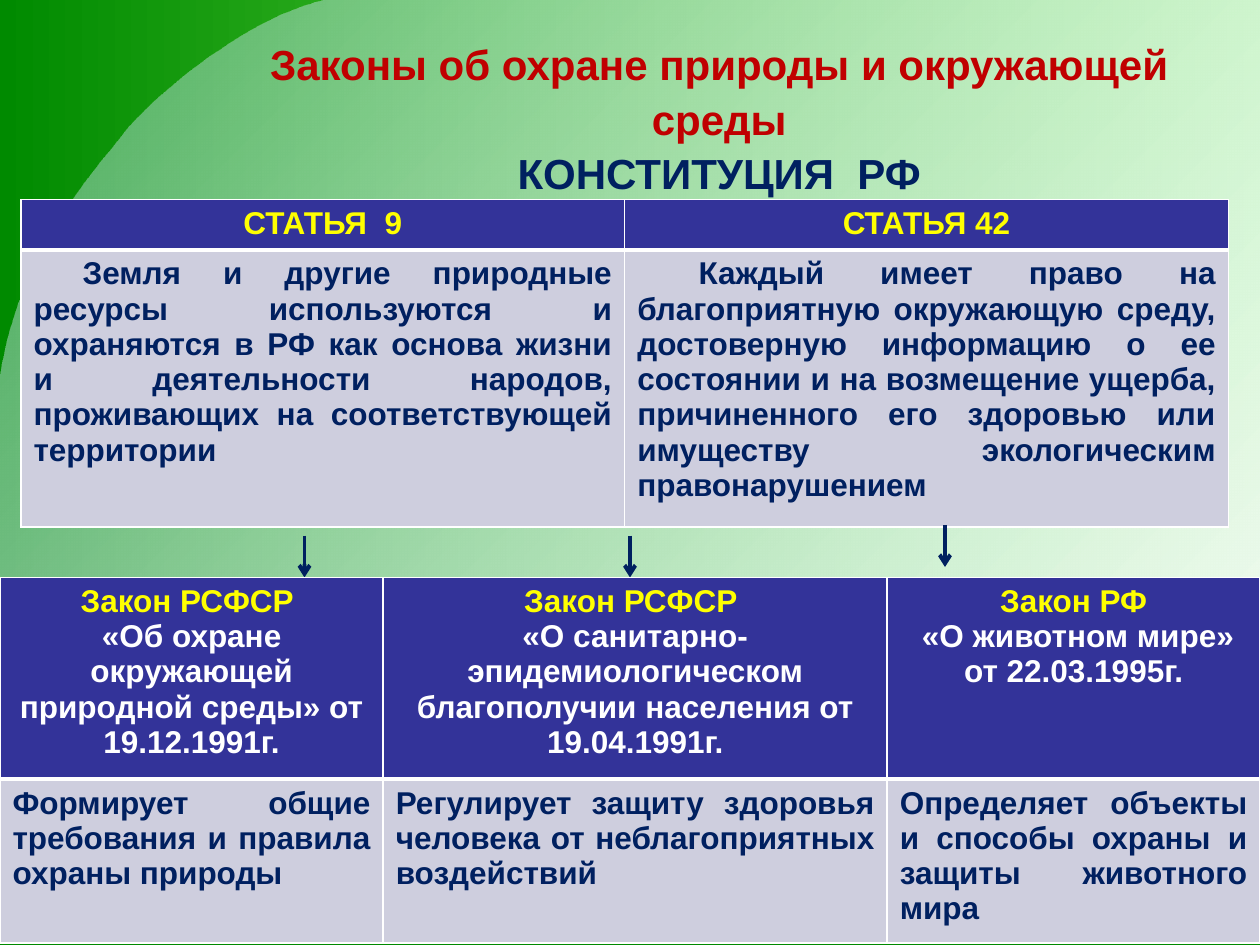
from lxml.etree import SubElement
from pptx import Presentation
from pptx.dml.color import RGBColor
from pptx.enum.shapes import MSO_CONNECTOR
from pptx.enum.text import MSO_ANCHOR, PP_ALIGN
from pptx.oxml.ns import qn
from pptx.util import Pt

FONT = "Arial"
HEX = {
    "green": "008A00", "lime": "99FF66", "mist": "BBE0E3", "white": "FFFFFF",
    "red": "C00000", "navy": "002060", "yellow": "FFFF00",
    "head": "333399", "body": "CECEDE",
}
ARTICLES = [
    ("СТАТЬЯ  9", 28,
     "Земля и другие природные ресурсы используются и охраняются в РФ как "
     "основа жизни и деятельности народов, проживающих на соответствующей "
     "территории"),
    ("СТАТЬЯ 42", 35,
     "Каждый имеет право на благоприятную окружающую среду, достоверную "
     "информацию о ее состоянии и на возмещение ущерба, причиненного его "
     "здоровью или имуществу экологическим правонарушением"),
]
LAWS = [
    ("Закон РСФСР ", "«Об охране окружающей природной среды» от 19.12.1991г.",
     "Формирует общие требования и правила охраны природы"),
    ("Закон РСФСР ",
     "«О санитарно- эпидемиологическом благополучии населения от 19.04.1991г.",
     "Регулирует защиту здоровья человека от неблагоприятных воздействий"),
    ("Закон РФ", " «О животном мире» от 22.03.1995г.",
     "Определяет объекты и способы охраны и защиты животного мира"),
]


def color(name):
    return RGBColor.from_string(HEX[name])


def blend(fill, names, angle):
    fill.gradient()
    fill.gradient_angle = angle
    for stop, name, pos in zip(fill.gradient_stops, names, (0, 1)):
        stop.color.rgb = color(name)
        stop.position = pos


def curve(a, b, c, d, steps=24):
    """Points along a cubic curve, without its start."""
    for i in range(1, steps + 1):
        t = i / steps
        u = 1 - t
        yield tuple(u**3 * p + 3 * u * u * t * q + 3 * u * t * t * r + t**3 * s
                    for p, q, r, s in zip(a, b, c, d))


def outline(slide, points):
    first, *rest = [(Pt(x), Pt(y)) for x, y in points]
    form = slide.shapes.build_freeform(*first)
    form.add_line_segments(rest, close=True)
    shape = form.convert_to_shape()
    shape.shadow.inherit = False
    shape.line.fill.background()
    return shape


def backdrop(slide, wide, high):
    blend(slide.background.fill, ("green", "lime"), 0)
    top, bend, edge = (186, 0), (70.5, 77), (0, 217)
    sheet = outline(slide, [
        top,
        *curve(top, (137, 11.5), (83.5, 60), bend),
        *curve(bend, (57.5, 95), (11.5, 140), edge),
        (0, high), (wide, high), (wide, 0)])
    blend(sheet.fill, ("mist", "white"), 315)
    stop = sheet.fill._xPr.find(".//" + qn("a:srgbClr"))
    SubElement(stop, qn("a:alpha"), val="39000")

    strip = outline(slide, [
        (wide, high - 18), (340, high - 18), (302, high - 17),
        (246, high - 14.5), (206, high - 13.5), (0, high - 13.5),
        (0, high), (wide, high)])
    strip.fill.solid()
    strip.fill.fore_color.rgb = color("green")


def style(para, size, align, tint=None):
    para.alignment = align
    font = para.font
    font.name, font.size, font.bold = FONT, Pt(size), True
    if tint:
        font.color.rgb = color(tint)


def title(slide, *box):
    frame = slide.shapes.add_textbox(*map(Pt, box)).text_frame
    frame.word_wrap = True
    frame.vertical_anchor = MSO_ANCHOR.MIDDLE
    para = frame.paragraphs[0]
    style(para, 24, PP_ALIGN.CENTER)
    para.line_spacing = 1.08
    for text, tint in (("Законы об охране природы и окружающей среды", "red"),
                       ("КОНСТИТУЦИЯ  РФ", "navy")):
        if para.runs:
            para.add_line_break()
        run = para.add_run()
        run.text = text
        run.font.color.rgb = color(tint)


def border(cell, below):
    props = cell._tc.get_or_add_tcPr()
    for i, (side, width) in enumerate(
            (("lnL", 1), ("lnR", 1), ("lnT", 1), ("lnB", below))):
        line = SubElement(props, qn("a:" + side), w=str(Pt(width)))
        fill = SubElement(line, qn("a:solidFill"))
        SubElement(fill, qn("a:srgbClr"), val=HEX["white"])
        props.remove(line)
        props.insert(i, line)


def fill_cell(cell, tone, lines, align, below, indent=0):
    cell.fill.solid()
    cell.fill.fore_color.rgb = color(tone)
    border(cell, below)
    frame = cell.text_frame
    for i, (text, tint) in enumerate(lines):
        para = frame.add_paragraph() if i else frame.paragraphs[0]
        para.text = text
        style(para, 18, align, tint)
        if indent:
            para._p.get_or_add_pPr().set("indent", str(Pt(indent)))


def grid(slide, left, top, cols, rows, items):
    """Table whose items are (heading lines, first-line indent, body text)."""
    table = slide.shapes.add_table(
        len(rows), len(cols), Pt(left), Pt(top),
        Pt(sum(cols)), Pt(sum(rows))).table
    for row, high in zip(table.rows, rows):
        row.height = Pt(high)
    for i, (wide, (heads, indent, body)) in enumerate(zip(cols, items)):
        table.columns[i].width = Pt(wide)
        fill_cell(table.cell(0, i), "head", heads, PP_ALIGN.CENTER, 3)
        fill_cell(table.cell(1, i), "body", [(body, "navy")],
                  PP_ALIGN.JUSTIFY, 1, indent)


def arrow(slide, x, y, length):
    line = slide.shapes.add_connector(
        MSO_CONNECTOR.STRAIGHT, Pt(x), Pt(y), Pt(x), Pt(y + length))
    line.line.color.rgb = color("navy")
    line.line.width = Pt(2.25)
    SubElement(line.line._get_or_add_ln(), qn("a:tailEnd"), type="arrow")
    SubElement(line._element.spPr, qn("a:effectLst"))


def main():
    deck = Presentation()
    wide, high = 720, 540
    deck.slide_width, deck.slide_height = Pt(wide), Pt(high)
    slide = deck.slides.add_slide(deck.slide_layouts[6])
    backdrop(slide, wide, high)
    title(slide, 138, 21.6, 546, 90)
    grid(slide, 12, 114, (345, 345), (28.8, 157.7),
         [([(head, "yellow")], indent, body)
          for head, indent, body in ARTICLES])
    for x, y in ((360, 306), (540, 300), (174, 306)):
        arrow(slide, x, y, 24)
    grid(slide, 0, 330, (219, 288, 213), (106, 86.5),
         [([(kind, "yellow"), (name, "white")], 0, body)
          for kind, name, body in LAWS])
    deck.save("out.pptx")


if __name__ == "__main__":
    main()
